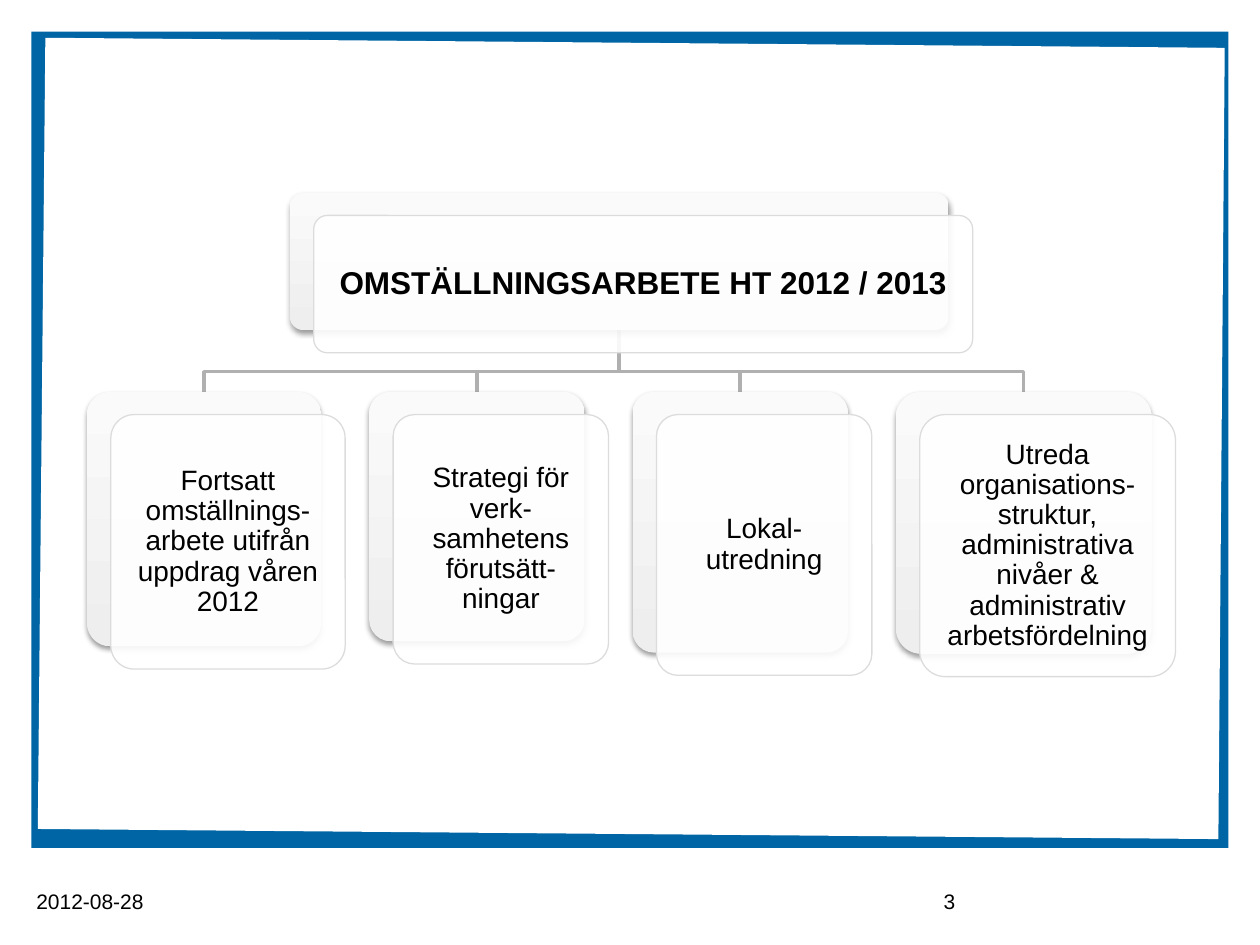
from dataclasses import dataclass

from lxml.etree import SubElement
from pptx import Presentation
from pptx.dml.color import RGBColor
from pptx.enum.shapes import MSO_SHAPE
from pptx.enum.text import MSO_ANCHOR, PP_ALIGN
from pptx.oxml.ns import qn
from pptx.shapes.autoshape import Shape
from pptx.slide import Slide
from pptx.text.text import TextFrame
from pptx.util import Inches, Pt

COLORS = {
    "frame": "0065A5",
    "paper": "FFFFFF",
    "branch": "B0B0B0",
    "card_bottom": "EEEEEE",
    "card_top": "FAFAFA",
    "card_edge": "DCDCDC",
    "text": "000000",
    "shadow": "000000",
}
FRONT_SHIFT = (0.19, 0.18)
CARD_GAP = 0.38
CARDS_LEFT, CARDS_TOP = 0.69, 3.11
BRANCH_Y = 2.95
PAPER_CORNERS = [(0.36, 0.3), (9.72, 0.38), (9.67, 6.66), (0.3, 6.58)]


@dataclass(frozen=True)
class Card:
    """A box of the chart, made of a shaded back and a translucent front."""

    text: str
    left: float
    top: float
    width: float
    height: float
    size: int = 16
    bold: bool = False

    @property
    def center(self) -> float:
        """Horizontal middle of the back."""
        return self.left + self.width / 2

    @property
    def bottom(self) -> float:
        """Lower edge of the back."""
        return self.top + self.height


@dataclass(frozen=True)
class FooterField:
    """A short text in the footer."""

    text: str
    left: float
    width: float
    align: PP_ALIGN


TITLE = Card("OMSTÄLLNINGSARBETE HT 2012 / 2013", 2.3, 1.53, 5.23, 1.09, 18, True)
TASKS = [
    ("Fortsatt omställnings-arbete utifrån uppdrag våren 2012", 1.86, 2.02),
    ("Strategi för verk-samhetens förutsätt-ningar", 1.71, 1.98),
    ("Lokal-utredning", 1.71, 2.07),
    (
        "Utreda organisations-struktur, administrativa nivåer & "
        "administrativ arbetsfördelning",
        2.03,
        2.08,
    ),
]
FOOTER = [
    FooterField("2012-08-28", 0.19, 2.33, PP_ALIGN.LEFT),
    FooterField("3", 5.86, 1.82, PP_ALIGN.RIGHT),
]


def rgb(name: str) -> RGBColor:
    """Look up a named colour."""
    return RGBColor.from_string(COLORS[name])


def write(frame: TextFrame, text: str, size: int, align: PP_ALIGN, bold: bool = False) -> None:
    """Set one wrapped, vertically centred paragraph."""
    frame.word_wrap = True
    frame.vertical_anchor = MSO_ANCHOR.MIDDLE
    paragraph = frame.paragraphs[0]
    paragraph.text = text
    paragraph.alignment = align
    paragraph.font.name = "Arial"
    paragraph.font.size = Pt(size)
    paragraph.font.bold = bold
    paragraph.font.color.rgb = rgb("text")


def add_box(slide: Slide, kind: MSO_SHAPE, left: float, top: float, width: float, height: float) -> Shape:
    """Add a preset shape without shadow."""
    box = slide.shapes.add_shape(kind, Inches(left), Inches(top), Inches(width), Inches(height))
    box.shadow.inherit = False
    return box


def add_outline(slide: Slide, points: list[tuple[float, float]], close: bool) -> Shape:
    """Add a freeform through points given in inches."""
    start, *rest = [(Inches(x), Inches(y)) for x, y in points]
    builder = slide.shapes.build_freeform(*start)
    builder.add_line_segments(rest, close=close)
    outline = builder.convert_to_shape()
    outline.shadow.inherit = False
    return outline


def add_frame(slide: Slide) -> None:
    """Draw the blue frame around the slanted paper."""
    frame = add_box(slide, MSO_SHAPE.RECTANGLE, 0.25, 0.25, 9.5, 6.48)
    paper = add_outline(slide, PAPER_CORNERS, True)
    for part, color in ((frame, "frame"), (paper, "paper")):
        part.fill.solid()
        part.fill.fore_color.rgb = rgb(color)
        part.line.fill.background()


def add_branch(slide: Slide, parent: Card, child: Card) -> None:
    """Draw the bent line from a parent card to a child card."""
    points = [
        (parent.center, parent.bottom),
        (parent.center, BRANCH_Y),
        (child.center, BRANCH_Y),
        (child.center, child.top),
    ]
    branch = add_outline(slide, points, False)
    branch.fill.background()
    branch.line.color.rgb = rgb("branch")
    branch.line.width = Pt(2)


def add_drop_shadow(shape: Shape) -> None:
    """Give a shape a soft shadow straight below."""
    effects = shape.element.spPr.find(qn("a:effectLst"))
    shadow = SubElement(
        effects, qn("a:outerShdw"), blurRad=str(Pt(3.1)), dist=str(Pt(1.6)), dir="5400000", rotWithShape="0"
    )
    color = SubElement(shadow, qn("a:srgbClr"), val=COLORS["shadow"])
    SubElement(color, qn("a:alpha"), val="38000")


def add_card(slide: Slide, card: Card) -> None:
    """Draw the back and the labelled front of a card."""
    back = add_box(slide, MSO_SHAPE.ROUNDED_RECTANGLE, card.left, card.top, card.width, card.height)
    back.adjustments[0] = 0.1
    back.fill.gradient()
    back.fill.gradient_angle = 90
    for stop, color in zip(back.fill.gradient_stops, ("card_bottom", "card_top")):
        stop.color.rgb = rgb(color)
    back.line.fill.background()
    add_drop_shadow(back)

    shift_x, shift_y = FRONT_SHIFT
    front = add_box(
        slide, MSO_SHAPE.ROUNDED_RECTANGLE, card.left + shift_x, card.top + shift_y, card.width, card.height
    )
    front.adjustments[0] = 0.1
    front.fill.solid()
    front.fill.fore_color.rgb = rgb("paper")
    fill_color = front.element.spPr.find(qn("a:solidFill")).find(qn("a:srgbClr"))
    SubElement(fill_color, qn("a:alpha"), val="90000")
    front.line.color.rgb = rgb("card_edge")
    front.line.width = Pt(0.75)
    label = front.text_frame
    label.margin_left = label.margin_right = label.margin_top = label.margin_bottom = Inches(0.07)
    write(label, card.text, card.size, PP_ALIGN.CENTER, card.bold)
    label.paragraphs[0].line_spacing = 0.9


def add_footer(slide: Slide, field: FooterField) -> None:
    """Add a footer text."""
    box = slide.shapes.add_textbox(Inches(field.left), Inches(6.95), Inches(field.width), Inches(0.4))
    write(box.text_frame, field.text, 12, field.align)


def lay_out_tasks() -> list[Card]:
    """Place the task cards in a row with equal gaps."""
    cards, left = [], CARDS_LEFT
    for text, width, height in TASKS:
        cards.append(Card(text, left, CARDS_TOP, width, height))
        left += width + CARD_GAP
    return cards


def main() -> None:
    """Build and save the slide."""
    deck = Presentation()
    deck.slide_width, deck.slide_height = Inches(10), Inches(7.5)
    slide = deck.slides.add_slide(deck.slide_layouts[6])
    add_frame(slide)
    for field in FOOTER:
        add_footer(slide, field)
    tasks = lay_out_tasks()
    for task in tasks:
        add_branch(slide, TITLE, task)
    for card in [TITLE, *tasks]:
        add_card(slide, card)
    deck.save("out.pptx")


if __name__ == "__main__":
    main()
